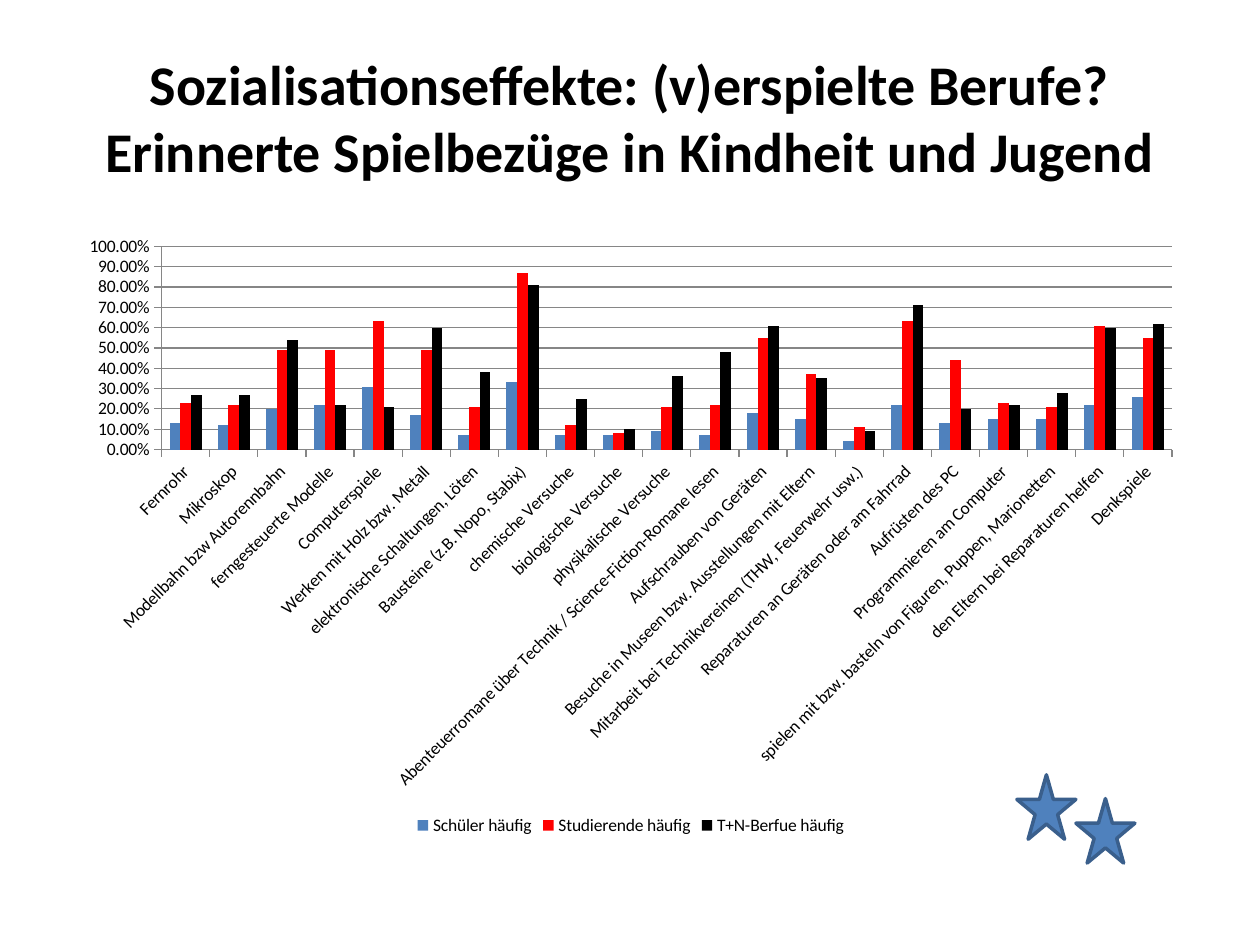
"""Build the slide on remembered childhood play and technical careers."""
from pptx import Presentation
from pptx.chart.data import CategoryChartData
from pptx.dml.color import RGBColor
from pptx.enum import chart as kinds, shapes, text
from pptx.oxml.ns import qn
from pptx.util import Cm, Pt


def tint(code):
    return RGBColor.from_string(code)


def write(frame, words, size=32, bold=True, color="000000", face="Calibri"):
    frame.word_wrap = True
    frame.vertical_anchor = text.MSO_ANCHOR.MIDDLE
    para = frame.paragraphs[0]
    para.text = words
    para.alignment = text.PP_ALIGN.CENTER
    for run in para.runs:
        run.font.size, run.font.bold, run.font.name = Pt(size), bold, face
        run.font.color.rgb = tint(color)


deck = Presentation()
deck.slide_width, deck.slide_height = Cm(25.4), Cm(19.05)
slide = deck.slides.add_slide(deck.slide_layouts[6])

title = slide.shapes.add_textbox(Cm(1.27), Cm(0.76), Cm(22.86), Cm(3.18))
write(title.text_frame, "Sozialisationseffekte: (v)erspielte Berufe?\v"
      "Erinnerte Spielbezüge in Kindheit und Jugend")

rows = [
    ("Fernrohr", 0.13, 0.23, 0.27),
    ("Mikroskop", 0.12, 0.22, 0.27),
    ("Modellbahn bzw Autorennbahn", 0.2, 0.49, 0.54),
    ("ferngesteuerte Modelle", 0.22, 0.49, 0.22),
    ("Computerspiele", 0.31, 0.63, 0.21),
    ("Werken mit Holz bzw. Metall", 0.17, 0.49, 0.6),
    ("elektronische Schaltungen, Löten", 0.07, 0.21, 0.38),
    ("Bausteine (z.B. Nopo, Stabix)", 0.33, 0.87, 0.81),
    ("chemische Versuche", 0.07, 0.12, 0.25),
    ("biologische Versuche", 0.07, 0.08, 0.1),
    ("physikalische Versuche", 0.09, 0.21, 0.36),
    ("Abenteuerromane über Technik / Science-Fiction-Romane lesen",
     0.07, 0.22, 0.48),
    ("Aufschrauben von Geräten", 0.18, 0.55, 0.61),
    ("Besuche in Museen bzw. Ausstellungen mit Eltern", 0.15, 0.37, 0.35),
    (" Mitarbeit bei Technikvereinen (THW, Feuerwehr usw.)",
     0.04, 0.11, 0.09),
    ("Reparaturen an Geräten oder am Fahrrad", 0.22, 0.63, 0.71),
    ("Aufrüsten des PC", 0.13, 0.44, 0.2),
    ("Programmieren am Computer", 0.15, 0.23, 0.22),
    ("spielen mit bzw. basteln von Figuren, Puppen, Marionetten",
     0.15, 0.21, 0.28),
    ("den Eltern bei Reparaturen helfen", 0.22, 0.61, 0.6),
    ("Denkspiele", 0.26, 0.55, 0.62),
]
groups = [("Schüler häufig", "4F81BD"), ("Studierende häufig", "FF0000"),
          ("T+N-Berfue häufig", "000000")]
names, *shares = zip(*rows)
data = CategoryChartData(number_format="0.00%")
data.categories = names
for (name, code), part in zip(groups, shares):
    data.add_series(name, part)

chart = slide.shapes.add_chart(
    kinds.XL_CHART_TYPE.COLUMN_CLUSTERED,
    Cm(1.35), Cm(4.52), Cm(22.73), Cm(12.42), data).chart
chart.has_title = False
chart.font.size, chart.font.name = Pt(10), "Calibri"
chart.font.color.rgb = tint("000000")
chart.has_legend = True
chart.legend.position = kinds.XL_LEGEND_POSITION.BOTTOM
chart.legend.include_in_layout = False

plot = chart.plots[0]
plot.gap_width, plot.overlap, plot.vary_by_categories = 150, 0, False
for bars, (name, code) in zip(plot.series, groups):
    bars.format.fill.solid()
    bars.format.fill.fore_color.rgb = tint(code)
    bars.invert_if_negative = False

base, scale = chart.category_axis, chart.value_axis
scale.minimum_scale, scale.maximum_scale, scale.major_unit = 0, 1, 0.1
scale.has_major_gridlines = True
scale.tick_labels.number_format = "0.00%"
scale.tick_labels.number_format_is_linked = False
for axis in (base, scale):
    axis.major_tick_mark = kinds.XL_TICK_MARK.OUTSIDE
    axis.format.line.color.rgb = tint("868686")
    axis.tick_labels.font.size = Pt(10)
scale.major_gridlines.format.line.color.rgb = tint("868686")
base._element.find(qn("c:txPr")).find(qn("a:bodyPr")).set("rot", "-2700000")

for left, top in [(21.69, 16.1), (20.5, 15.62)]:
    star = slide.shapes.add_shape(shapes.MSO_SHAPE.STAR_5_POINT,
                                  Cm(left), Cm(top), Cm(1.19), Cm(1.3))
    star.shadow.inherit = False
    star.fill.solid()
    star.fill.fore_color.rgb = tint("4F81BD")
    star.line.color.rgb = tint("3A5F8C")
    star.line.width = Pt(2)

deck.save("out.pptx")
